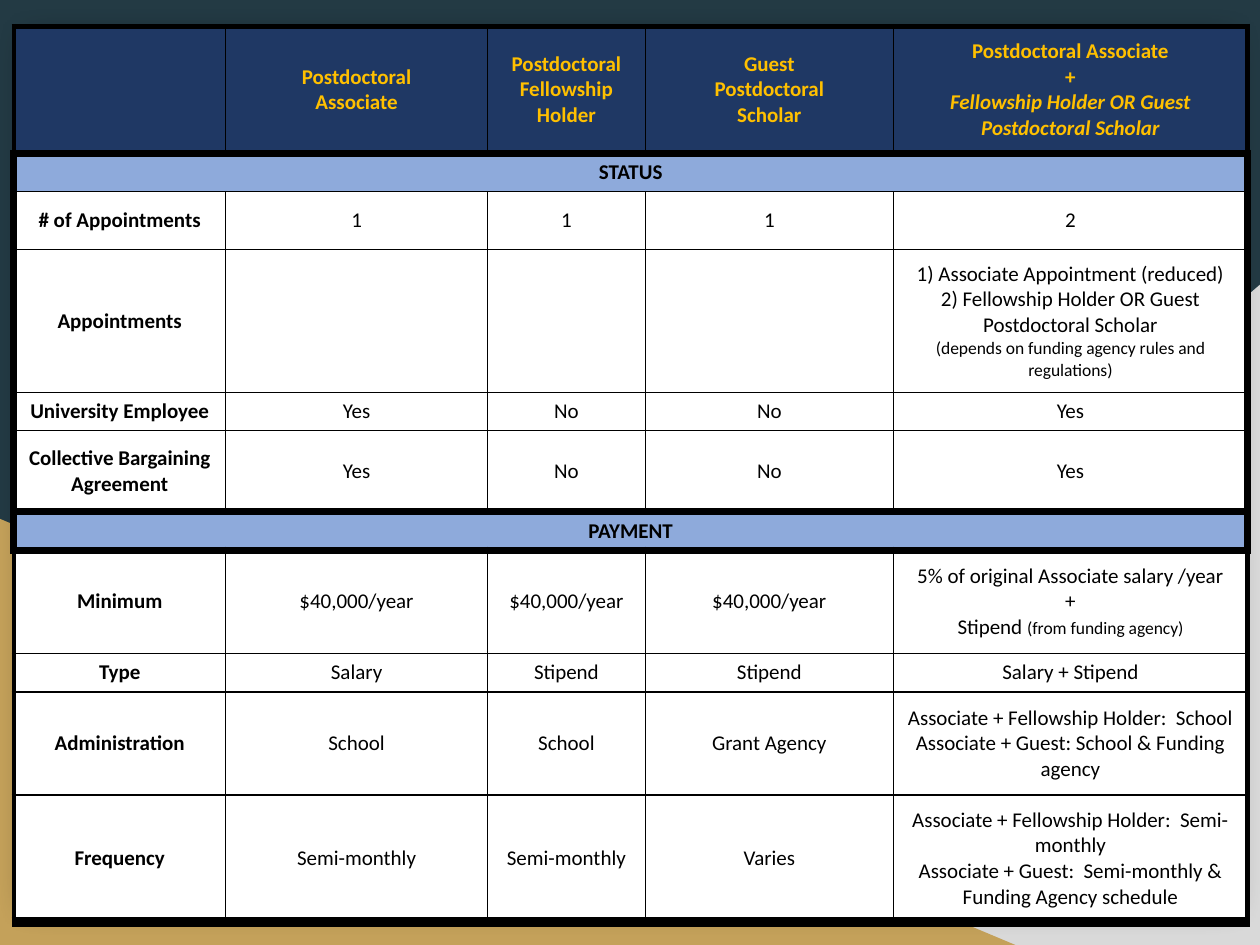
"""Build a slide comparing postdoctoral appointment types."""
from lxml.etree import SubElement
from pptx import Presentation
from pptx.dml.color import RGBColor
from pptx.enum.shapes import MSO_SHAPE as Preset
from pptx.enum.text import MSO_ANCHOR as Anchor, PP_ALIGN as Align
from pptx.oxml.ns import qn
from pptx.util import Cm, Pt


def paint(fill, color):
    fill.solid()
    fill.fore_color.rgb = RGBColor.from_string(color)


def add_border(cell, side, width):
    line = SubElement(cell._tc.get_or_add_tcPr(), qn(f"a:ln{side}"), w=str(Pt(width)))
    color = SubElement(line, qn("a:solidFill"))
    SubElement(color, qn("a:srgbClr"), val="000000")


prs = Presentation()
prs.slide_width, prs.slide_height = Cm(25.4), Cm(19.05)
slide = prs.slides.add_slide(prs.slide_layouts[6])
paint(slide.background.fill, "233A44")

backdrop = [
    (Preset.RIGHT_TRIANGLE, 9.96, 5.74, 15.44, 13.31, "D9D9D9"),
    (Preset.RIGHT_TRIANGLE, 0, 10.46, 20.47, 8.59, "C4A15A"),
    (Preset.RECTANGLE, 0.56, 0.76, 24.28, 17.53, "FFFFFF"),
]
panels = []
for preset, left, top, width, height, color in backdrop:
    panel = slide.shapes.add_shape(preset, Cm(left), Cm(top), Cm(width), Cm(height))
    panel.shadow.inherit = False
    paint(panel.fill, color)
    panel.line.fill.background()
    panels.append(panel)
gray_corner, gold_corner, sheet = panels
gray_corner._element.spPr.xfrm.set("flipH", "1")
glow = SubElement(sheet._element.spPr.find(qn("a:effectLst")), qn("a:outerShdw"),
                  blurRad=str(Pt(18)), dist="0", dir="0", algn="ctr", rotWithShape="0")
glow_color = SubElement(glow, qn("a:srgbClr"), val="000000")
SubElement(glow_color, qn("a:alpha"), val="40000")

content = [
    ["", "Postdoctoral\nAssociate", "Postdoctoral\nFellowship\nHolder",
     "Guest\nPostdoctoral\nScholar",
     "Postdoctoral Associate\n+\nFellowship Holder OR Guest Postdoctoral Scholar"],
    ["STATUS"],
    ["# of Appointments", "1", "1", "1", "2"],
    ["Appointments", "", "", "",
     "1) Associate Appointment (reduced)\n"
     "2) Fellowship Holder OR Guest Postdoctoral Scholar\n"
     "|(depends on funding agency rules and regulations)"],
    ["University Employee", "Yes", "No", "No", "Yes"],
    ["Collective Bargaining Agreement", "Yes", "No", "No", "Yes"],
    ["PAYMENT"],
    ["Minimum", "$40,000/year", "$40,000/year", "$40,000/year",
     "5% of original Associate salary /year\n+\nStipend |(from funding agency)"],
    ["Type", "Salary", "Stipend", "Stipend", "Salary + Stipend"],
    ["Administration", "School", "School", "Grant Agency",
     "Associate + Fellowship Holder:  School\n"
     "Associate + Guest: School & Funding agency"],
    ["Frequency", "Semi-monthly", "Semi-monthly", "Varies",
     "Associate + Fellowship Holder:  Semi-monthly\n"
     "Associate + Guest:  Semi-monthly & Funding Agency schedule"],
]
col_widths = [4.27, 5.28, 3.18, 5, 7.14]
row_heights = [2.56, 0.76, 1.17, 2.87, 0.76, 1.63, 0.76, 2.08, 0.76, 2.08, 2.56]
row_rules = [3, 4.5, 0.5, 0.5, 0.5, 0.5, 4.5, 4.5, 1, 1, 1, 6]
outer_rules = [3] + [4.5] * 6 + [3] * 4
inner_rules = [1] + [0.5] * 6 + [1] * 4

comparison = slide.shapes.add_table(
    len(content), len(col_widths), Cm(0.28), Cm(0.53),
    Cm(sum(col_widths)), Cm(sum(row_heights))).table
comparison.first_row = comparison.horz_banding = False
for column, width in zip(comparison.columns, col_widths):
    column.width = Cm(width)
for row, height in zip(comparison.rows, row_heights):
    row.height = Cm(height)

for r, texts in enumerate(content):
    is_section = len(texts) == 1
    if is_section:
        comparison.cell(r, 0).merge(comparison.cell(r, 4))
    row_fill = "1F3864" if r == 0 else "8EAADB" if is_section else "FFFFFF"
    for c in range(len(col_widths)):
        cell = comparison.cell(r, c)
        add_border(cell, "L", outer_rules[r] if c == 0 else inner_rules[r])
        add_border(cell, "R", outer_rules[r] if c == 4 or is_section else inner_rules[r])
        add_border(cell, "T", row_rules[r])
        add_border(cell, "B", row_rules[r + 1])
        paint(cell.fill, row_fill)
    for c, text in enumerate(texts):
        cell = comparison.cell(r, c)
        cell.vertical_anchor = Anchor.MIDDLE
        inset = Cm(0 if c == 3 else 0.13)
        cell.margin_left = cell.margin_right = inset
        cell.margin_top = cell.margin_bottom = inset
        cell.text = text.replace("|", "")
        for paragraph, line in zip(cell.text_frame.paragraphs, text.split("\n")):
            paragraph.alignment = Align.CENTER
            font = paragraph.font
            font.name, font.size = "Calibri", Pt(12)
            font.bold = r == 0 or c == 0
            font.italic = r == 0 and "OR" in line
            paint(font.fill, "FFC000" if r == 0 else "000000")
            normal, bar, small = line.partition("|")
            if bar:
                paragraph.runs[0].text = normal or small
                note = paragraph.add_run() if normal else paragraph.runs[0]
                note.text = small
                note.font.size = Pt(10)

prs.save("out.pptx")
